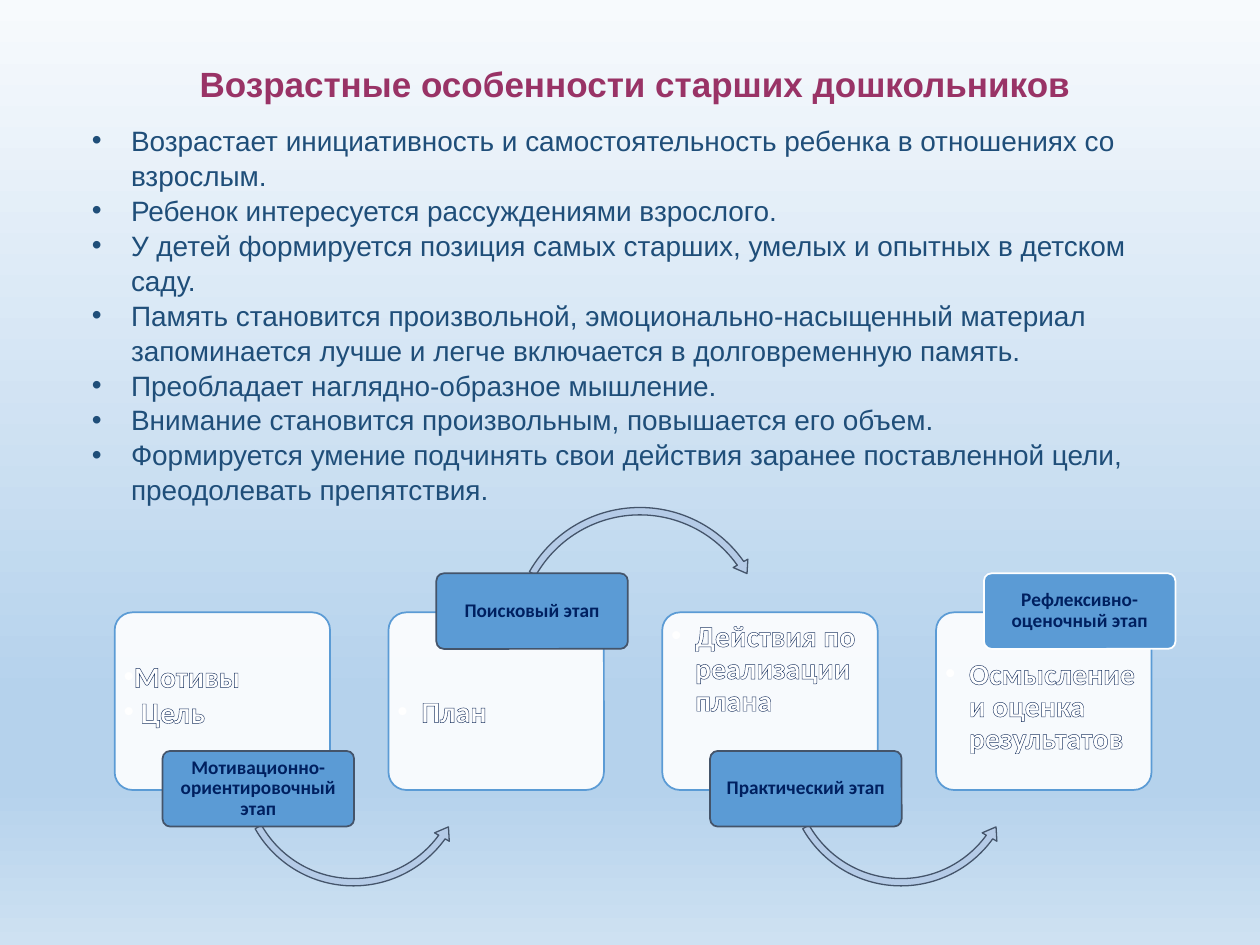
from lxml.etree import SubElement as Sub, fromstring
from pptx import Presentation
from pptx.dml.color import RGBColor as RGB
from pptx.enum.dml import MSO_PATTERN as Pat
from pptx.enum.shapes import MSO_SHAPE as Form
from pptx.enum.text import MSO_ANCHOR as Anchor, MSO_AUTO_SIZE as Fit, PP_ALIGN as Align
from pptx.oxml.ns import nsdecls, qn
from pptx.util import Inches, Pt

WIDE, HIGH = Inches(10), Inches(7.5)
HUES = {"title": "993366", "text": "1F4E79", "blue": "5B9BD5", "slate": "44546A",
        "white": "FFFFFF", "navy": "002060", "arc": "B5CBE7", "hatch": "8FAADC",
        "edge": "203864"}
SKY = [(0, "F7FAFD"), (74, "B5D2EC"), (83, "B5D2EC"), (100, "CEE1F2")]

TITLE = "Возрастные особенности старших дошкольников"
TRAITS = [
    "Возрастает инициативность и самостоятельность ребенка в отношениях со взрослым.",
    "Ребенок интересуется рассуждениями взрослого.",
    "У детей формируется позиция самых старших, умелых и опытных в детском саду.",
    "Память становится произвольной, эмоционально-насыщенный материал запоминается "
    "лучше и легче включается в долговременную память.",
    "Преобладает наглядно-образное мышление.",
    "Внимание становится произвольным, повышается его объем.",
    "Формируется умение подчинять свои действия заранее поставленной цели, "
    "преодолевать препятствия.",
]
# label, points, top inset in inches, bullet indent, line spacing, label edge
STAGES = [
    ("Мотивационно-ориентировочный этап", ["Мотивы", " Цель"], 0.32, 0, 1, "slate"),
    ("Поисковый этап", ["План"], 0.63, 0.19, 0.9, "slate"),
    ("Практический этап", ["Действия по реализации плана"], 0.03, 0.19, 0.9, "slate"),
    ("Рефлексивно-оценочный этап", ["Осмысление и оценка результатов"],
     0.33, 0.19, 0.9, "white"),
]

# Shares of the slide, in percent
LEFT, STEP = 9.1, 21.73
PANEL = (64.8, 17.1, 18.8)
LABEL = (15.2, 8)
LOW, TOP = 79.47, 60.67
LOOPS = {
    True: (Form.LEFT_CIRCULAR_ARROW, 9.6, (69.33, 18.7, 24.93),
           (0.031, 3.789, 21.544, 90.245, 0.036)),
    False: (Form.CIRCULAR_ARROW, 9.5, (53.2, 20.9, 27.87),
            (0.028, 3.367, 194.878, 125.755, 0.032)),
}


def color(name):
    return RGB.from_string(HUES[name])


def put(obj, **vals):
    for key, val in vals.items():
        setattr(obj, key, val)


def box(x, y, w, h):
    """Turn percent shares into slide lengths."""
    return [int(v * side / 100) for v, side in zip((x, y, w, h), (WIDE, HIGH) * 2)]


def place(shape, *share):
    put(shape, **dict(zip(("left", "top", "width", "height"), box(*share))))


def pad(frame, left, top, right, bottom):
    put(frame, margin_left=Inches(left), margin_top=Inches(top),
        margin_right=Inches(right), margin_bottom=Inches(bottom))


def write(frame, lines, size, face, hue, bold=False, **form):
    """Fill a frame with one paragraph a line and return the paragraphs."""
    paras = []
    for i, line in enumerate(lines):
        para = frame.add_paragraph() if i else frame.paragraphs[0]
        put(para, **form)
        run = para.add_run()
        run.text = line
        put(run.font, size=Pt(size), name=face, bold=bold)
        run.font.color.rgb = color(hue)
        paras.append(para)
    return paras


def bullet(para, dent):
    props = para._p.get_or_add_pPr()
    props.set("marL", str(Inches(dent)))
    props.set("indent", str(-Inches(dent)))
    Sub(props, qn("a:buFont"), typeface="Arial")
    Sub(props, qn("a:buChar"), char="•")


def hatch(font):
    """Give letters a striped fill and a thin outline."""
    font.fill.patterned()
    put(font.fill, pattern=Pat.LIGHT_DOWNWARD_DIAGONAL)
    font.fill.fore_color.rgb = color("hatch")
    font.fill.back_color.rgb = color("white")
    font._element.insert(0, fromstring(
        f'<a:ln {nsdecls("a")} w="12700"><a:solidFill>'
        f'<a:srgbClr val="{HUES["edge"]}"/></a:solidFill></a:ln>'))


def draw(slide, form, share, fill, line, width, adj):
    shape = slide.shapes.add_shape(form, *box(*share))
    shape.shadow.inherit = False
    shape.fill.solid()
    shape.fill.fore_color.rgb = color(fill)
    shape.line.color.rgb = color(line)
    shape.line.width = Pt(width)
    for i, val in enumerate(adj):
        shape.adjustments[i] = val
    return shape


def panel(slide, x, points, inset, dent, space):
    y, w, h = PANEL
    card = draw(slide, Form.ROUNDED_RECTANGLE, (x, y, w, h), "white", "blue", 1, [0.1])
    tint = card._element.spPr.find(qn("a:solidFill")).find(qn("a:srgbClr"))
    Sub(tint, qn("a:alpha"), val="90000")
    frame = card.text_frame
    put(frame, word_wrap=True, vertical_anchor=Anchor.TOP)
    pad(frame, 0.03, inset, 0.03, 0.03)
    for para in write(frame, points, 17, "Calibri", "white", True,
                      alignment=Align.LEFT, line_spacing=space):
        bullet(para, dent)
        hatch(para.runs[0].font)


def label(slide, x, y, text, edge):
    tag = draw(slide, Form.ROUNDED_RECTANGLE, (x, y, *LABEL), "blue", edge, 1, [0.1])
    frame = tag.text_frame
    put(frame, word_wrap=True, vertical_anchor=Anchor.MIDDLE)
    pad(frame, 0.02, 0.02, 0.02, 0.02)
    write(frame, [text], 11, "Calibri", "navy", True,
          alignment=Align.CENTER, line_spacing=0.9)


def loop(slide, x, low):
    form, shift, share, adj = LOOPS[low]
    draw(slide, form, (x + shift, *share), "arc", "slate", 0.75, adj)


def shade(slide):
    fill = slide.background.fill
    fill.gradient()
    fill.gradient_angle = 270
    stops = slide._element.find(".//" + qn("a:gsLst"))
    for old in list(stops):
        stops.remove(old)
    for pos, hue in SKY:
        stop = Sub(stops, qn("a:gs"), pos=str(pos * 1000))
        Sub(stop, qn("a:srgbClr"), val=hue)


def head(slide):
    title = slide.shapes.title
    place(title, 13.8, 5.87, 73.2, 5.87)
    put(title.text_frame, auto_size=Fit.NONE, word_wrap=True,
        vertical_anchor=Anchor.MIDDLE)
    write(title.text_frame, [TITLE], 20, "Arial", "title", True,
          alignment=Align.CENTER)


def traits(slide):
    body = slide.placeholders[1]
    place(body, 6.3, 12.27, 88.2, 40.8)
    put(body.text_frame, auto_size=Fit.NONE, word_wrap=True)
    for para in write(body.text_frame, TRAITS, 16, "Arial", "text",
                      space_before=Pt(0), line_spacing=1.04):
        bullet(para, 0.31)


def main():
    deck = Presentation()
    put(deck, slide_width=WIDE, slide_height=HIGH)
    slide = deck.slides.add_slide(deck.slide_layouts[1])
    shade(slide)
    head(slide)
    traits(slide)
    for i, (name, points, inset, dent, space, edge) in enumerate(STAGES):
        x, low = LEFT + i * STEP, i % 2 == 0
        panel(slide, x, points, inset, dent, space)
        if i < len(STAGES) - 1:
            loop(slide, x, low)
        label(slide, x + 3.8, LOW if low else TOP, name, edge)
    deck.save("out.pptx")


if __name__ == "__main__":
    main()
